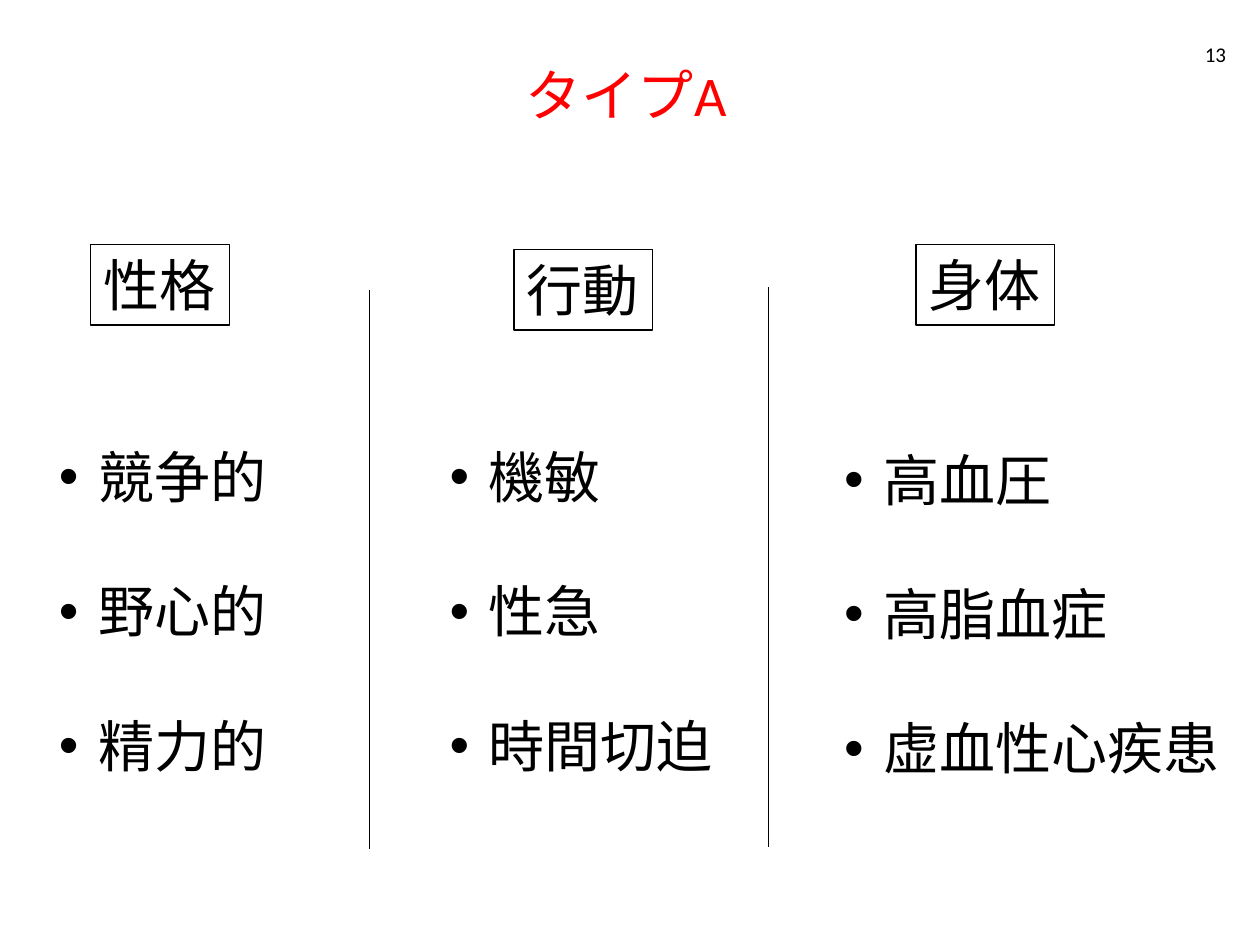
from dataclasses import dataclass

from lxml import etree
from pptx import Presentation, util as u
from pptx.dml.color import RGBColor
from pptx.enum import shapes, text
from pptx.oxml.ns import qn

WIDTH, HEIGHT = u.Inches(10), u.Inches(7.5)
COLUMNS, ROWS = 100, 75


@dataclass(frozen=True)
class Theme:
    ink: RGBColor = RGBColor(0, 0, 0)
    accent: RGBColor = RGBColor(255, 0, 0)
    heading_font: str = "Calibri"
    body_font: str = "Arial"
    large: int = 32
    small: int = 12
    rule: float = 0.75


@dataclass(frozen=True)
class Area:
    """A place on the grid, in columns and rows."""
    left: float
    top: float
    width: float
    height: float


@dataclass(frozen=True)
class Topic:
    heading: str
    heading_left: float
    heading_top: float
    traits: tuple[str, ...]
    list_left: float
    list_top: float
    list_width: float


@dataclass(frozen=True)
class Divider:
    left: float
    top: float


THEME = Theme()
LIST_HEIGHT = 31.6
HEADING_WIDTH, HEADING_HEIGHT = 11, 6.4
DIVIDER_HEIGHT = 44.4
BULLET_INDENT = 3.1

TOPICS = (
    Topic("性格", 7.2, 19.4, ("競争的", "野心的", "精力的"), 3.7, 29.3, 18.6),
    Topic("行動", 40.8, 19.8, ("機敏", "性急", "時間切迫"), 34.7, 29.3, 23.1),
    Topic("身体", 72.7, 19.4, ("高血圧", "高脂血症", "虚血性心疾患"), 66, 29.5, 32.1),
)
DIVIDERS = (Divider(29.3, 23), Divider(61, 22.8))


def across(columns: float) -> int:
    return round(WIDTH * columns / COLUMNS)


def down(rows: float) -> int:
    return round(HEIGHT * rows / ROWS)


def add_bullet(para) -> None:
    props = para._p.get_or_add_pPr()
    props.set("marL", str(across(BULLET_INDENT)))
    props.set("indent", str(-across(BULLET_INDENT)))
    etree.SubElement(props, qn("a:buFont")).set("typeface", THEME.body_font)
    etree.SubElement(props, qn("a:buChar")).set("char", "•")


def add_text(page, area: Area, *lines: str, font: str = THEME.body_font,
             size: int = THEME.large, color: RGBColor = THEME.ink,
             align=text.PP_ALIGN.LEFT, anchor=text.MSO_ANCHOR.TOP,
             wrap: bool = False, bullets: bool = False, outline: bool = False) -> None:
    box = page.shapes.add_textbox(across(area.left), down(area.top),
                                  across(area.width), down(area.height))
    if outline:
        box.line.color.rgb = THEME.ink
        box.line.width = u.Pt(THEME.rule)
    frame = box.text_frame
    frame.word_wrap = wrap
    frame.vertical_anchor = anchor
    frame.auto_size = (text.MSO_AUTO_SIZE.NONE if wrap
                       else text.MSO_AUTO_SIZE.SHAPE_TO_FIT_TEXT)
    for index, line in enumerate(lines):
        para = frame.add_paragraph() if index else frame.paragraphs[0]
        para.alignment = align
        if bullets:
            para.line_spacing = 2.0
            add_bullet(para)
        span = para.add_run()
        span.text = line
        span.font.name = font
        span.font.size = u.Pt(size)
        span.font.color.rgb = color


def add_topic(page, topic: Topic) -> None:
    add_text(page, Area(topic.list_left, topic.list_top, topic.list_width, LIST_HEIGHT),
             *topic.traits, bullets=True)
    add_text(page, Area(topic.heading_left, topic.heading_top, HEADING_WIDTH, HEADING_HEIGHT),
             topic.heading, outline=True)


def add_divider(page, divider: Divider) -> None:
    x = across(divider.left)
    line = page.shapes.add_connector(shapes.MSO_CONNECTOR.STRAIGHT, x, down(divider.top),
                                     x, down(divider.top + DIVIDER_HEIGHT))
    line.line.color.rgb = THEME.ink
    line.line.width = u.Pt(THEME.rule)
    etree.SubElement(line._element.spPr, qn("a:effectLst"))


def main() -> None:
    deck = Presentation()
    deck.slide_width, deck.slide_height = WIDTH, HEIGHT
    page = deck.slides.add_slide(deck.slide_layouts[6])
    add_text(page, Area(4.7, 3.9, 90, 7.2), "タイプA", font=THEME.heading_font,
             color=THEME.accent, align=text.PP_ALIGN.CENTER,
             anchor=text.MSO_ANCHOR.MIDDLE, wrap=True)
    add_text(page, Area(75, 2.3, 23.3, 4), "13", font=THEME.heading_font,
             size=THEME.small, align=text.PP_ALIGN.RIGHT,
             anchor=text.MSO_ANCHOR.MIDDLE, wrap=True)
    for topic in TOPICS:
        add_topic(page, topic)
    for divider in DIVIDERS:
        add_divider(page, divider)
    deck.save("out.pptx")


if __name__ == "__main__":
    main()
